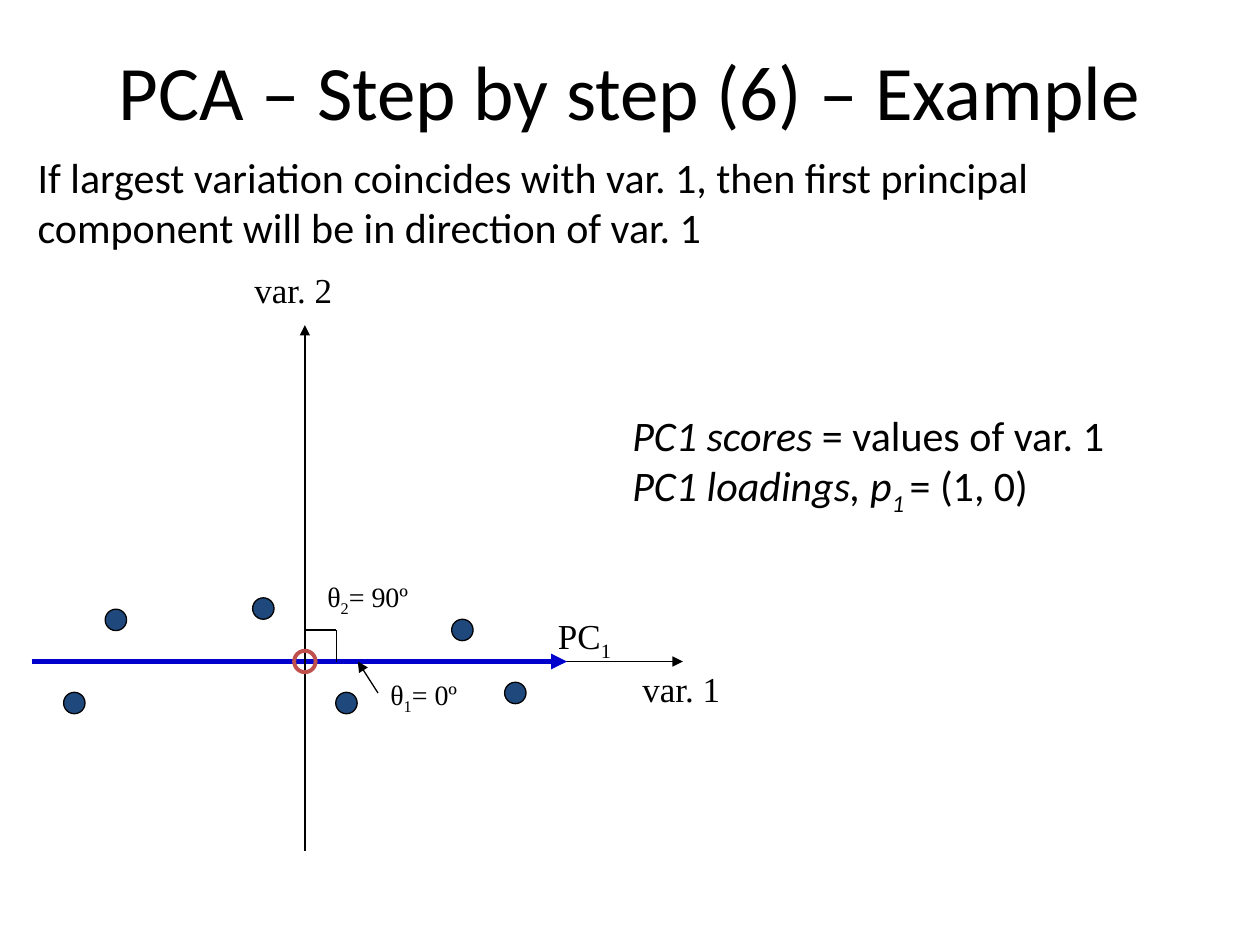
from lxml import etree
from pptx import Presentation
from pptx import util as u
from pptx.dml.color import RGBColor
from pptx.enum import shapes, text
from pptx.oxml.ns import qn

BLACK = RGBColor(0x00, 0x00, 0x00)
NAVY = RGBColor(0x1F, 0x49, 0x7D)
BLUE = RGBColor(0x00, 0x00, 0xCC)
RED = RGBColor(0xC0, 0x50, 0x4D)
SANS, SERIF = "Calibri", "Times New Roman"
SUB = "sub"
MARK = 0.17  # diameter of a data point


def add_text(slide, box, paragraphs, size, font=SANS, wrap=False, grow=True,
             align=text.PP_ALIGN.LEFT):
    """Each paragraph is a list of (words, styles); styles may hold 'i' and SUB."""
    frame = slide.shapes.add_textbox(*map(u.Inches, box)).text_frame
    fit = text.MSO_AUTO_SIZE.SHAPE_TO_FIT_TEXT if grow else text.MSO_AUTO_SIZE.NONE
    for key, value in {"word_wrap": wrap, "auto_size": fit}.items():
        setattr(frame, key, value)
    for index, runs in enumerate(paragraphs):
        paragraph = frame.add_paragraph() if index else frame.paragraphs[0]
        paragraph.alignment = align
        for words, *styles in runs:
            run = paragraph.add_run()
            run.text = words
            look = {"size": u.Pt(size), "name": font, "italic": "i" in styles}
            for key, value in look.items():
                setattr(run.font, key, value)
            run.font.color.rgb = BLACK
            if SUB in styles:
                run._r.get_or_add_rPr().set("baseline", "-25000")


def add_line(slide, start, end, color=BLACK, width=0.75, arrow=False):
    line = slide.shapes.add_connector(
        shapes.MSO_CONNECTOR.STRAIGHT, *map(u.Inches, (*start, *end)))
    line.line.color.rgb = color
    line.line.width = u.Pt(width)
    if arrow:
        etree.SubElement(line.line._get_or_add_ln(), qn("a:tailEnd"), type="triangle")
    etree.SubElement(line._element.spPr, qn("a:effectLst"))


def add_mark(slide, x, y, fill, color, width):
    """Round mark centred on x, y."""
    mark = slide.shapes.add_shape(
        shapes.MSO_SHAPE.OVAL,
        *map(u.Inches, (x - MARK / 2, y - MARK / 2, MARK, MARK)))
    mark.shadow.inherit = False
    if fill is None:
        mark.fill.background()
    else:
        mark.fill.solid()
        mark.fill.fore_color.rgb = fill
    mark.line.color.rgb = color
    mark.line.width = u.Pt(width)


def add_plot(slide, left, top, width, height):
    """Two variables, their observations and the first component."""
    x0, y0 = left + 2.17, top + 2.67  # origin of the axes

    def at(dx, dy):
        return x0 + dx, y0 + dy

    # Axes and first principal component
    add_line(slide, (left, y0), (left + width, y0), arrow=True)
    add_line(slide, (left, y0), at(2.08, 0), BLUE, 3, arrow=True)
    add_line(slide, (x0, top + height), (x0, top), arrow=True)

    # Observations, as offsets from the origin
    for offset in ((1.67, 0.25), (1.25, -0.25), (-0.33, -0.42),
                   (-1.83, 0.33), (-1.5, -0.33), (0.33, 0.33)):
        add_mark(slide, *at(*offset), NAVY, BLACK, 0.75)
    add_mark(slide, x0, y0, None, RED, 2.25)

    # Right angle and pointer to the zero angle
    corner = at(0.25, -0.25)
    add_line(slide, at(0, -0.25), corner)
    add_line(slide, corner, at(0.25, 0))
    add_line(slide, at(0.58, 0.25), at(0.42, 0), arrow=True)

    # Labels: offset, extent, size, runs
    labels = (
        ((2.58, 0), (0.88, 0.43), 20, [("var. 1",)]),
        ((-0.5, -3.17), (0.88, 0.43), 20, [("var. 2",)]),
        ((1.91, -0.42), (0.66, 0.43), 20, [("PC",), ("1", SUB)]),
        ((0.08, -0.7), (0.87, 0.37), 16, [("θ",), ("2", SUB), ("= 90º",)]),
        ((0.58, 0.08), (0.76, 0.37), 16, [("θ",), ("1", SUB), ("= 0º",)]),
    )
    for offset, extent, size, runs in labels:
        add_text(slide, (*at(*offset), *extent), [runs], size, SERIF)


def add_heading(slide, left, top, width, height):
    add_text(slide, (left, top, width, height),
             [[("PCA – Step by step (6) – Example",)]], 44,
             wrap=True, grow=False, align=text.PP_ALIGN.CENTER)


def add_statement(slide, left, top, width, height):
    add_text(slide, (left, top, width, height),
             [[("If largest variation coincides with var. 1, then first principal "
                "component will be in direction of var. 1",)]], 24, wrap=True)


def add_result(slide, left, top, width, height):
    add_text(slide, (left, top, width, height), [
        [("PC1 scores", "i"), (" = values of var. 1",)],
        [("PC1 loadings, p", "i"), ("1 ", "i", SUB), ("= (1, 0)",)],
    ], 24)


def main():
    prs = Presentation()
    prs.slide_width, prs.slide_height = u.Inches(10), u.Inches(7.5)
    slide = prs.slides.add_slide(prs.slide_layouts[6])
    add_plot(slide, 0.25, 2.58, 5.17, 4.17)
    add_result(slide, 4.92, 3.2, 4.56, 0.9)
    add_statement(slide, 0.2, 1.15, 9.63, 0.9)
    add_heading(slide, 0.5, 0.3, 9, 1.25)
    prs.save("out.pptx")


if __name__ == "__main__":
    main()
